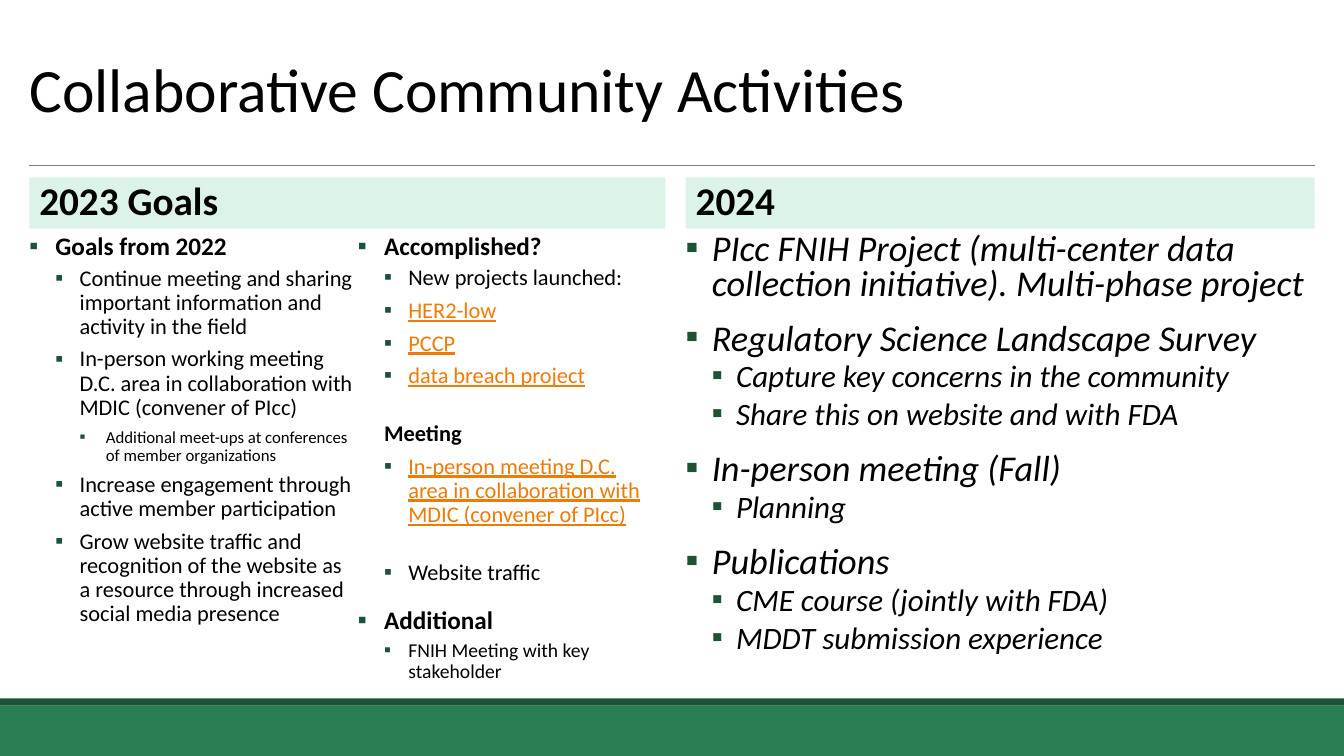
"""Build the slide on collaborative community activities."""
from lxml.etree import SubElement
from pptx import Presentation
from pptx.dml.color import RGBColor
from pptx.enum.shapes import MSO_CONNECTOR, MSO_SHAPE
from pptx.enum.text import MSO_ANCHOR, MSO_AUTO_SIZE, PP_ALIGN
from pptx.oxml.ns import qn
from pptx.util import Pt

PX = 9144
FONT = "Calibri"
BLACK, DARK, GREEN = "000000", "1B5337", "297D53"
MINT, GRAY, ORANGE = "DCF4E8", "808080", "EE7B08"
INDENT = [(26, -26), (50, -24), (76, -26)]


def ink(code):
    return RGBColor.from_string(code)


def write(frame, rows, lead, bullets=True):
    frame.text = "\n".join(row[2] for row in rows)
    frame.word_wrap = True
    frame.auto_size = MSO_AUTO_SIZE.NONE
    for n, (para, (level, size, text, style)) in enumerate(zip(frame.paragraphs, rows)):
        para.level = level
        para.alignment = PP_ALIGN.LEFT
        para.line_spacing = lead
        before = 20 if "gap" in style else 2 if level else 12
        para.space_before = Pt(before if n else 0)
        para.space_after = Pt(4 if level else 2)
        props = para._p.get_or_add_pPr()
        left, hang = INDENT[level] if bullets else (0, 0)
        if bullets and "plain" not in style:
            tint = SubElement(props, qn("a:buClr"))
            SubElement(tint, qn("a:srgbClr"), val=DARK)
            SubElement(props, qn("a:buFont"), typeface=FONT)
            SubElement(props, qn("a:buChar"), char="▪")
        else:
            SubElement(props, qn("a:buNone"))
            left, hang = left + hang, 0
        props.set("marL", str(left * PX))
        props.set("indent", str(hang * PX))
        for run in para.runs:
            font = run.font
            font.name = FONT
            font.size = Pt(size)
            font.bold = "bold" in style
            font.italic = "italic" in style
            font.underline = "link" in style
            font.color.rgb = ink(ORANGE if "link" in style else BLACK)


deck = Presentation()
deck.slide_width, deck.slide_height = 1333 * PX, 750 * PX
slide = deck.slides.add_slide(deck.slide_layouts[4])
shapes = slide.shapes
title, head, goals, next_head, plans = slide.placeholders

for top, high, code in [(700, 50, GREEN), (693, 7, DARK)]:
    bar = shapes.add_shape(MSO_SHAPE.RECTANGLE, 0, top * PX, 1333 * PX, high * PX)
    bar.shadow.inherit = False
    bar.fill.solid()
    bar.fill.fore_color.rgb = ink(code)
    bar.line.fill.background()

rule = shapes.add_connector(
    MSO_CONNECTOR.STRAIGHT, 29 * PX, 164 * PX, 1304 * PX, 164 * PX)
rule.line.color.rgb = ink(GRAY)
rule.line.width = Pt(0.5)
SubElement(rule._element.spPr, qn("a:effectLst"))

for box, left, wide, text in [(head, 29, 631, "2023 Goals"), (next_head, 680, 624, "2024")]:
    box.left, box.top, box.width, box.height = left * PX, 176 * PX, wide * PX, 51 * PX
    box.fill.solid()
    box.fill.fore_color.rgb = ink(MINT)
    box.text_frame.vertical_anchor = MSO_ANCHOR.MIDDLE
    write(box.text_frame, [(0, 28, text, "bold")], 0.9, False)

title.left, title.top, title.width, title.height = 29 * PX, 22 * PX, 1275 * PX, 140 * PX
title.text_frame.margin_left = title.text_frame.margin_right = 0
title.text_frame.vertical_anchor = MSO_ANCHOR.MIDDLE
write(title.text_frame, [(0, 44, "Collaborative Community Activities", "")], 0.9, False)

aims = [
    (0, 18, "Goals from 2022", "bold"),
    (1, 16, "Continue meeting and sharing important information and activity in the field", ""),
    (1, 16, "In-person working meeting D.C. area in collaboration with MDIC (convener of PIcc)", ""),
    (2, 12, "Additional meet-ups at conferences of member organizations", ""),
    (1, 16, "Increase engagement through active member participation", ""),
    (1, 16, "Grow website traffic and recognition of the website as a resource "
            "through increased social media presence", ""),
]
done = [
    (0, 18, "Accomplished?", "bold"),
    (1, 16, "New projects launched:", ""),
    (1, 16, "HER2-low", "link"),
    (1, 16, "PCCP", "link"),
    (1, 16, "data breach project", "link"),
    (1, 16, "Meeting", "bold plain gap"),
    (1, 16, "In-person meeting D.C. area in collaboration with MDIC (convener of PIcc)", "link"),
    (1, 16, "Website traffic", "gap"),
    (0, 18, "Additional", "bold"),
    (1, 14, "FNIH Meeting with key stakeholder", ""),
]
ahead = [
    (0, 25.9, "PIcc FNIH Project (multi-center data collection initiative). "
              "Multi-phase project", "italic"),
    (0, 25.9, "Regulatory Science Landscape Survey", "italic"),
    (1, 22.2, "Capture key concerns in the community", "italic"),
    (1, 22.2, "Share this on website and with FDA", "italic"),
    (0, 25.9, "In-person meeting (Fall)", "italic"),
    (1, 22.2, "Planning", "italic"),
    (0, 25.9, "Publications", "italic"),
    (1, 22.2, "CME course (jointly with FDA)", "italic"),
    (1, 22.2, "MDDT submission experience", "italic"),
]
status = shapes.add_textbox(0, 0, PX, PX)
for box, left, wide, rows, lead in [
    (goals, 29, 325, aims, 0.9),
    (status, 355, 298, done, 0.9),
    (plans, 680, 624, ahead, 0.8),
]:
    box.left, box.top, box.width, box.height = left * PX, 227 * PX, wide * PX, 464 * PX
    frame = box.text_frame
    frame.margin_left = frame.margin_right = 0
    frame.margin_top = frame.margin_bottom = 5 * PX
    frame.vertical_anchor = MSO_ANCHOR.TOP
    write(frame, rows, lead)

deck.save("out.pptx")
